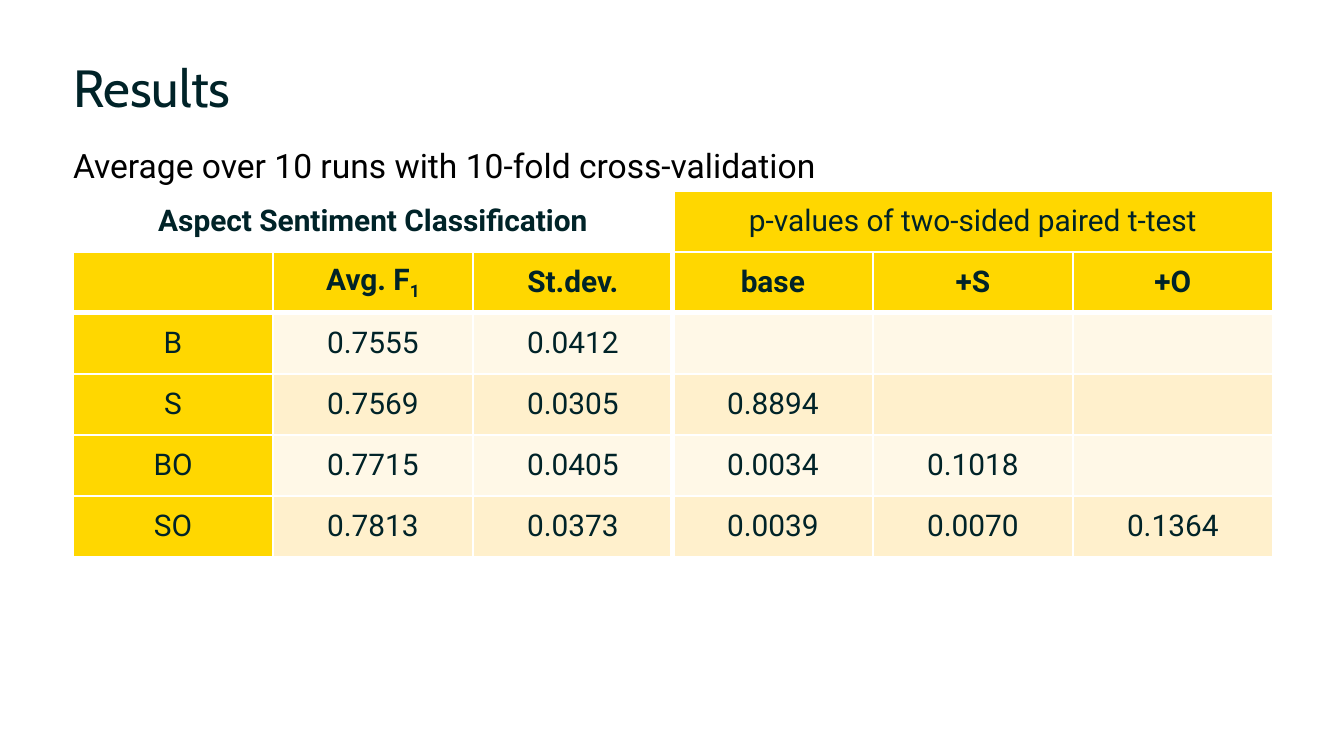
from lxml import etree
from pptx import Presentation, util as u
from pptx.dml.color import RGBColor
from pptx.enum import text
from pptx.oxml import ns

PX = u.Inches(10) / 1344
INK = RGBColor(0x00, 0x23, 0x28)
BLACK = RGBColor(0x00, 0x00, 0x00)
WHITE = RGBColor(0xFF, 0xFF, 0xFF)
GOLD = RGBColor(0xFF, 0xD7, 0x00)
CREAM = RGBColor(0xFF, 0xF8, 0xE7)
SAND = RGBColor(0xFF, 0xF0, 0xCC)

TITLE = {"name": "Cabin", "size": u.Pt(28)}
SUBTITLE = {"name": "Roboto", "size": u.Pt(18)}
CELL = {"name": "Roboto", "size": u.Pt(16)}

GROUPS = ["Aspect Sentiment Classification", "p-values of two-sided paired t-test"]
ROWS = [
    [GROUPS[0], "", "", GROUPS[1], "", ""],
    ["", "Avg. F", "St.dev.", "base", "+S", "+O"],
    ["B", "0.7555", "0.0412", "", "", ""],
    ["S", "0.7569", "0.0305", "0.8894", "", ""],
    ["BO", "0.7715", "0.0405", "0.0034", "0.1018", ""],
    ["SO", "0.7813", "0.0373", "0.0039", "0.0070", "0.1364"],
]
GROUP_SIZE = 3


def emu(*lengths):
    return [u.Emu(round(length * PX)) for length in lengths]


def write(para, words, style, color, bold=False):
    span = para.add_run()
    span.text = words
    for name, value in {**style, "bold": bold}.items():
        setattr(span.font, name, value)
    span.font.color.rgb = color
    return span


def add_line(page, area, words, style, color, spacing):
    box = page.shapes.add_textbox(*emu(*area))
    frame = box.text_frame
    layout = {"word_wrap": True, "vertical_anchor": text.MSO_ANCHOR.TOP,
              "margin_left": 0, "margin_top": 0,
              "margin_right": 0, "margin_bottom": 0}
    for name, value in layout.items():
        setattr(frame, name, value)
    para = frame.paragraphs[0]
    para.line_spacing = u.Pt(spacing)
    write(para, words, style, color)


def set_borders(cell, widths):
    """Draw white borders; widths maps a side (L, R, T, B) to points."""
    properties = cell._tc.get_or_add_tcPr()
    for side, width in widths.items():
        line = etree.SubElement(properties, ns.qn(f"a:ln{side}"), w=str(u.Pt(width)))
        solid = etree.SubElement(line, ns.qn("a:solidFill"))
        etree.SubElement(solid, ns.qn("a:srgbClr"), val=str(WHITE))


def cell_fill(row, column):
    if row == 0:
        return WHITE if column < GROUP_SIZE else GOLD
    if row == 1 or column == 0:
        return GOLD
    return CREAM if row % 2 == 0 else SAND


def add_results(page, area):
    count = len(ROWS[0])
    table = page.shapes.add_table(len(ROWS), count, *emu(*area)).table
    table.first_row = table.horz_banding = False
    side_margin, end_margin = emu(17, 5)
    layout = {"vertical_anchor": text.MSO_ANCHOR.MIDDLE,
              "margin_left": side_margin, "margin_right": side_margin,
              "margin_top": end_margin, "margin_bottom": end_margin}

    # Group headings each span half of the columns
    for start in range(0, count, GROUP_SIZE):
        table.cell(0, start).merge(table.cell(0, start + GROUP_SIZE - 1))

    for row, values in enumerate(ROWS):
        for column, words in enumerate(values):
            cell = table.cell(row, column)
            for name, value in layout.items():
                setattr(cell, name, value)
            # Thick rules split the two groups and the head from the body
            last = column + (GROUP_SIZE - 1 if cell.is_merge_origin else 0)
            set_borders(cell, {
                "L": 3 if column == GROUP_SIZE else 1,
                "R": 3 if last == GROUP_SIZE - 1 else 1,
                "T": 3 if row == 2 else 1,
                "B": 3 if row == 1 else 1,
            })
            cell.fill.solid()
            cell.fill.fore_color.rgb = cell_fill(row, column)
            if words:
                para = cell.text_frame.paragraphs[0]
                para.alignment = text.PP_ALIGN.CENTER
                bold = row == 1 or (row, column) == (0, 0)
                write(para, words, CELL, INK, bold)

    # Subscript of the F1 score
    score = table.cell(1, 1).text_frame.paragraphs[0]
    subscript = write(score, "1", CELL, INK, True)
    subscript._r.get_or_add_rPr().set("baseline", "-25000")


def main():
    deck = Presentation()
    deck.slide_width, deck.slide_height = emu(1344, 756)
    page = deck.slides.add_slide(deck.slide_layouts[6])
    add_line(page, (73, 58, 1201, 84), "Results", TITLE, INK, 32)
    add_results(page, (73, 191, 1200, 366))
    add_line(page, (73, 142, 1200, 47),
             "Average over 10 runs with 10-fold cross-validation", SUBTITLE, BLACK, 23)
    deck.save("out.pptx")


if __name__ == "__main__":
    main()
